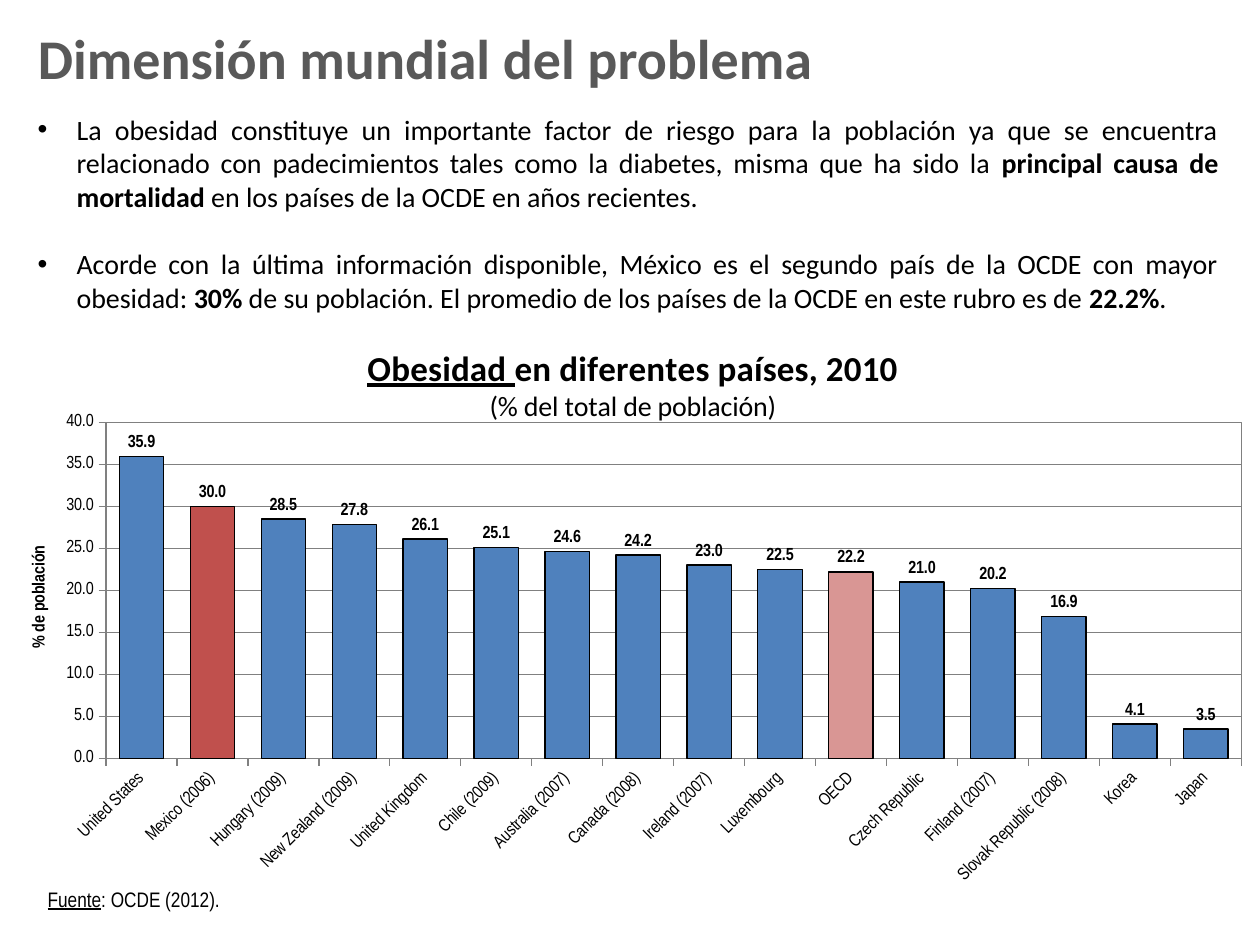
from dataclasses import dataclass

from lxml.etree import SubElement
from pptx import Presentation
from pptx.chart.data import CategoryChartData
from pptx.dml.color import RGBColor
from pptx.enum.chart import XL_CHART_TYPE as ChartType
from pptx.enum.chart import XL_LABEL_POSITION as LabelPosition
from pptx.enum.chart import XL_TICK_MARK as TickMark
from pptx.enum.text import MSO_ANCHOR as Anchor
from pptx.enum.text import PP_ALIGN as Align
from pptx.oxml.ns import qn
from pptx.util import Inches, Pt


@dataclass(frozen=True)
class Theme:
    body_font: str = "Calibri"
    chart_font: str = "Arial Narrow"
    black: RGBColor = RGBColor(0, 0, 0)
    heading: RGBColor = RGBColor(0x59, 0x59, 0x59)
    grid: RGBColor = RGBColor(0x80, 0x80, 0x80)
    bar: RGBColor = RGBColor(0x4F, 0x81, 0xBD)
    mexico: RGBColor = RGBColor(0xC0, 0x50, 0x4D)
    oecd: RGBColor = RGBColor(0xD9, 0x96, 0x94)
    heading_size: Pt = Pt(32)
    chart_title_size: Pt = Pt(20)
    body_size: Pt = Pt(16)
    source_size: Pt = Pt(12)
    chart_size: Pt = Pt(10)


@dataclass(frozen=True)
class Span:
    text: str
    bold: bool = False
    underline: bool = False


@dataclass(frozen=True)
class Box:
    left: float
    top: float
    width: float
    height: float

    def lengths(self):
        return [Inches(value) for value in (self.left, self.top, self.width, self.height)]


@dataclass(frozen=True)
class Country:
    name: str
    obesity: float
    color: RGBColor = Theme.bar


THEME = Theme()

BULLETS = [
    [
        Span("La obesidad constituye un importante factor de riesgo para la población ya que se "
             "encuentra relacionado con padecimientos tales como la diabetes, misma que ha sido la "),
        Span("principal causa de mortalidad", bold=True),
        Span(" en los países de la OCDE en años recientes."),
    ],
    [
        Span("Acorde con la última información disponible, México es el segundo país de la OCDE "
             "con mayor obesidad: "),
        Span("30%", bold=True),
        Span(" de su población. El promedio de los países de la OCDE en este rubro es de "),
        Span("22.2%", bold=True),
        Span("."),
    ],
]

COUNTRIES = [
    Country("United States", 35.9),
    Country("Mexico (2006)", 30.0, THEME.mexico),
    Country("Hungary (2009)", 28.5),
    Country("New Zealand (2009)", 27.8),
    Country("United Kingdom", 26.1),
    Country("Chile (2009)", 25.1),
    Country("Australia (2007)", 24.6),
    Country("Canada (2008)", 24.2),
    Country("Ireland (2007)", 23.0),
    Country("Luxembourg", 22.5),
    Country("OECD", 22.2, THEME.oecd),
    Country("Czech Republic", 21.0),
    Country("Finland (2007)", 20.2),
    Country("Slovak Republic (2008)", 16.9),
    Country("Korea", 4.1),
    Country("Japan", 3.5),
]


def format_font(font, name: str, size: Pt, color: RGBColor = THEME.black, bold: bool = False):
    font.name, font.size, font.bold = name, size, bold
    font.color.rgb = color


def add_spans(paragraph, spans: list[Span], name: str, size: Pt):
    for span in spans:
        run = paragraph.add_run()
        run.text = span.text
        format_font(run.font, name, size, bold=span.bold)
        run.font.underline = span.underline


def add_text_frame(slide, box: Box):
    text_frame = slide.shapes.add_textbox(*box.lengths()).text_frame
    text_frame.word_wrap = True
    return text_frame


def add_title(slide, text: str, box: Box):
    title = slide.shapes.title
    title.left, title.top, title.width, title.height = box.lengths()
    text_frame = title.text_frame
    text_frame.text = text
    text_frame.word_wrap = False
    text_frame.vertical_anchor = Anchor.MIDDLE
    paragraph = text_frame.paragraphs[0]
    paragraph.alignment = Align.LEFT
    format_font(paragraph.runs[0].font, THEME.body_font, THEME.heading_size, THEME.heading, True)


def add_bullets(slide, bullets: list[list[Span]], box: Box):
    text_frame = add_text_frame(slide, box)
    for index, spans in enumerate(bullets):
        paragraph = text_frame.add_paragraph() if index else text_frame.paragraphs[0]
        properties = paragraph._p.get_or_add_pPr()
        properties.set("marL", str(Inches(0.31)))
        properties.set("indent", str(Inches(-0.31)))
        SubElement(properties, qn("a:buFont"), typeface="Arial")
        SubElement(properties, qn("a:buChar"), char="•")
        paragraph.alignment = Align.JUSTIFY
        if index:
            paragraph.space_before = Pt(19.5)
        add_spans(paragraph, spans, THEME.body_font, THEME.body_size)


def set_layout(parent, position: int, **values):
    for previous in parent.findall(qn("c:layout")):
        parent.remove(previous)
    layout = SubElement(parent, qn("c:layout"))
    parent.insert(position, layout)
    manual = SubElement(layout, qn("c:manualLayout"))
    for tag, value in values.items():
        SubElement(manual, qn(f"c:{tag}"), val=str(value))


def format_axis(axis):
    axis.major_tick_mark = TickMark.OUTSIDE
    axis.minor_tick_mark = TickMark.NONE
    axis.format.line.color.rgb = THEME.grid
    format_font(axis.tick_labels.font, THEME.chart_font, THEME.chart_size)


def format_chart_title(chart):
    chart.has_title = True
    text_frame = chart.chart_title.text_frame
    heading = [Span("Obesidad ", True, True), Span("en diferentes países, 2010", True)]
    add_spans(text_frame.paragraphs[0], heading, THEME.body_font, THEME.chart_title_size)
    add_spans(text_frame.add_paragraph(), [Span("(% del total de población)")],
              THEME.body_font, THEME.body_size)
    set_layout(chart.chart_title._element, 1, xMode="edge", yMode="edge", x=0.28, y=0.03)


def add_obesity_chart(slide, countries: list[Country], box: Box):
    data = CategoryChartData(number_format="0.0")
    data.categories = [country.name for country in countries]
    data.add_series("Series 1", [country.obesity for country in countries])
    chart = slide.shapes.add_chart(ChartType.COLUMN_CLUSTERED, *box.lengths(), data).chart
    chart.has_legend = False
    format_font(chart.font, THEME.chart_font, THEME.chart_size)
    format_chart_title(chart)

    category_axis, value_axis = chart.category_axis, chart.value_axis
    for axis in (category_axis, value_axis):
        format_axis(axis)
    category_axis._element.find(qn("c:txPr")).find(qn("a:bodyPr")).set("rot", "-2700000")
    value_axis.minimum_scale, value_axis.maximum_scale, value_axis.major_unit = 0, 40, 5
    value_axis.tick_labels.number_format = "0.0"
    value_axis.tick_labels.number_format_is_linked = False
    value_axis.major_gridlines.format.line.color.rgb = THEME.grid
    axis_title = value_axis.axis_title
    add_spans(axis_title.text_frame.paragraphs[0], [Span("% de población", True)],
              THEME.chart_font, THEME.chart_size)
    set_layout(axis_title._element, 1, xMode="edge", yMode="edge", x=0.01, y=0.38)

    plot = chart.plots[0]
    plot.gap_width = 60
    plot.vary_by_categories = False
    series = plot.series[0]
    for index, country in enumerate(countries):
        point_format = series.points[index].format
        point_format.fill.solid()
        point_format.fill.fore_color.rgb = country.color
        point_format.line.color.rgb = THEME.black
        point_format.line.width = Pt(0.75)
    labels = series.data_labels
    labels.show_value = True
    labels.position = LabelPosition.OUTSIDE_END
    labels.number_format, labels.number_format_is_linked = "0.0", False
    format_font(labels.font, THEME.chart_font, THEME.chart_size, bold=True)

    plot_area = chart._chartSpace.chart.plotArea
    set_layout(plot_area, 0, layoutTarget="inner", xMode="edge", yMode="edge",
               x=0.073, y=0.171, w=0.912, h=0.584)
    border = SubElement(SubElement(plot_area, qn("c:spPr")), qn("a:ln"), w=str(Pt(0.75)))
    SubElement(SubElement(border, qn("a:solidFill")), qn("a:srgbClr"), val=str(THEME.grid))


def add_source(slide, box: Box):
    paragraph = add_text_frame(slide, box).paragraphs[0]
    paragraph.alignment = Align.JUSTIFY
    add_spans(paragraph, [Span("Fuente", underline=True), Span(": OCDE (2012).")],
              THEME.chart_font, THEME.source_size)


def main():
    presentation = Presentation()
    presentation.slide_width, presentation.slide_height = Inches(10), Inches(7.5)
    slide = presentation.slides.add_slide(presentation.slide_layouts[5])
    add_title(slide, "Dimensión mundial del problema", Box(0.2, 0.13, 6.4, 0.64))
    add_bullets(slide, BULLETS, Box(0.2, 0.84, 9.57, 1.72))
    add_source(slide, Box(0.28, 6.99, 8.43, 0.3))
    add_obesity_chart(slide, COUNTRIES, Box(0.12, 2.57, 9.88, 4.57))
    presentation.save("out.pptx")


if __name__ == "__main__":
    main()
